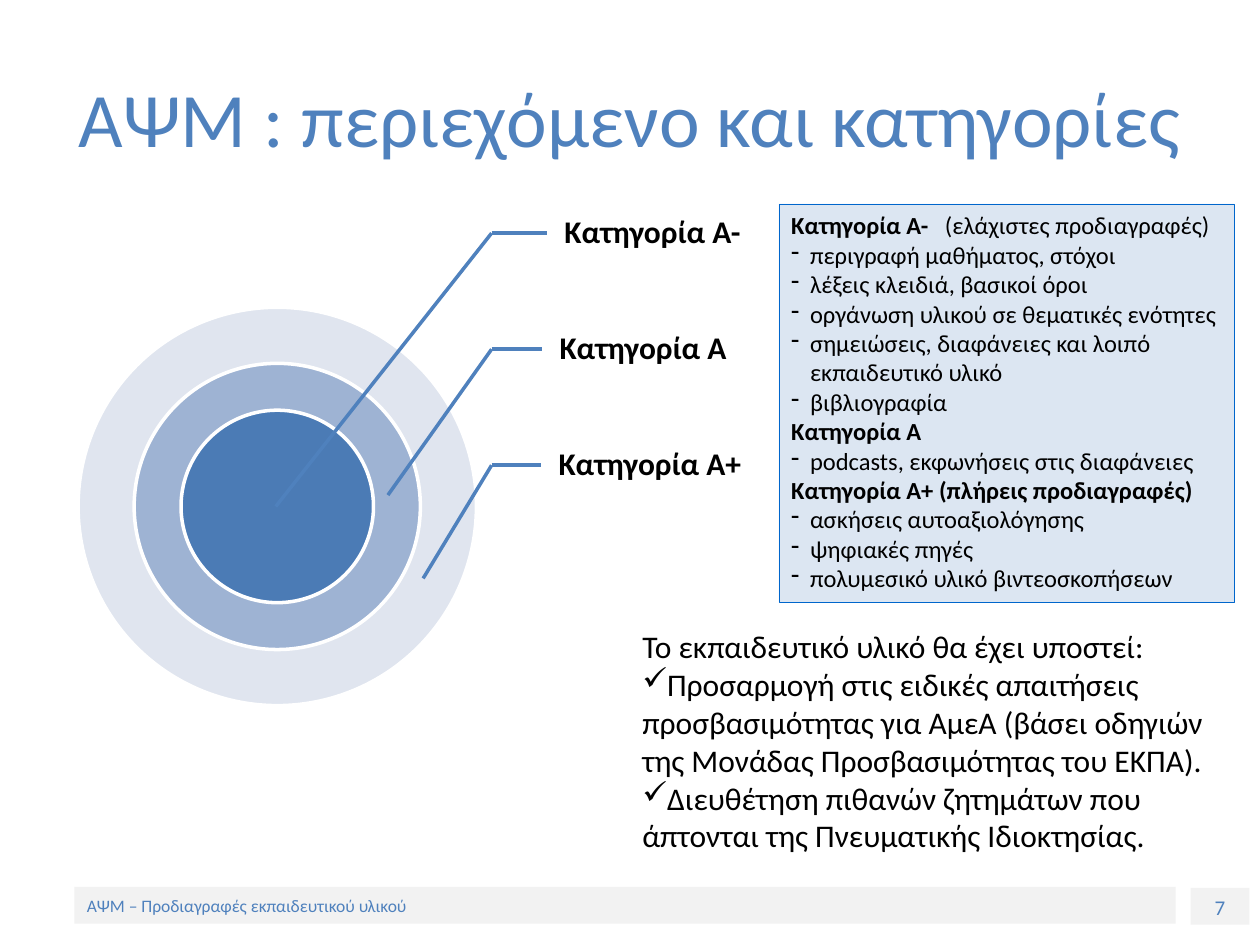
from dataclasses import dataclass

import pptx
import pptx.dml.color
import pptx.enum.shapes
import pptx.enum.text
import pptx.oxml
import pptx.oxml.ns
import pptx.util
from pptx.util import Cm

Anchor = pptx.enum.text.MSO_ANCHOR
Align = pptx.enum.text.PP_ALIGN
Shape = pptx.enum.shapes.MSO_SHAPE
qn = pptx.oxml.ns.qn


@dataclass(frozen=True)
class Theme:
    font: str = "Calibri"
    accent: str = "4F81BD"
    text: str = "000000"
    white: str = "FFFFFF"
    footer_fill: str = "F2F2F2"
    panel_fill: str = "DCE6F2"
    panel_line: str = "0066CC"
    title_size: int = 44
    body_size: int = 18
    panel_size: int = 14
    number_size: int = 12
    footer_size: int = 10


@dataclass(frozen=True)
class Line:
    """One paragraph: a bold part, a plain part, and its list marker."""
    bold: str = ""
    plain: str = ""
    bullet: str = ""
    hang: float = 0
    tab: float = 0


@dataclass(frozen=True)
class Ring:
    diameter: float
    color: str
    opacity: int


@dataclass(frozen=True)
class Category:
    label: str
    left: float
    width: float
    target: tuple[float, float]


THEME = Theme()
DASH_HANG = 0.38
RING_CENTER = (5.59, 10.21)
FIRST_LABEL_Y, LABEL_PITCH, LABEL_HEIGHT = 4.7, 2.34, 2.34
ELBOW_X = 9.91

RINGS = [Ring(8.03, "C2CDE1", 50), Ring(5.77, "88A3CA", 75), Ring(3.88, "4B7BB5", 100)]

CATEGORIES = [
    Category("Κατηγορία Α-", 11.02, 4.01, (5.56, 10.21)),
    Category("Κατηγορία Α", 10.92, 4.01, (7.82, 9.98)),
    Category("Κατηγορία Α+", 10.9, 4.78, (8.53, 11.66)),
]


def dash(text: str) -> Line:
    return Line(plain=text, bullet="-", hang=DASH_HANG)


SPECIFICATIONS = [
    Line(bold="Κατηγορία Α-", plain="\t(ελάχιστες προδιαγραφές)", tab=3.1),
    dash("περιγραφή μαθήματος, στόχοι"),
    dash("λέξεις κλειδιά, βασικοί όροι"),
    dash("οργάνωση υλικού σε θεματικές ενότητες"),
    dash("σημειώσεις, διαφάνειες και λοιπό εκπαιδευτικό υλικό"),
    dash("βιβλιογραφία"),
    Line(bold="Κατηγορία Α"),
    dash("podcasts, εκφωνήσεις στις διαφάνειες"),
    Line(bold="Κατηγορία Α+ (πλήρεις προδιαγραφές)"),
    dash("ασκήσεις αυτοαξιολόγησης"),
    dash("ψηφιακές πηγές"),
    dash("πολυμεσικό υλικό βιντεοσκοπήσεων"),
]

MATERIAL_CHECKS = [
    Line(plain="Το εκπαιδευτικό υλικό θα έχει υποστεί:"),
    Line(plain="Προσαρμογή στις ειδικές απαιτήσεις προσβασιμότητας για ΑμεΑ "
               "(βάσει οδηγιών της Μονάδας Προσβασιμότητας του ΕΚΠΑ).", bullet="✓"),
    Line(plain="Διευθέτηση πιθανών ζητημάτων που άπτονται της "
               "Πνευματικής Ιδιοκτησίας.", bullet="✓"),
]


def rgb(color: str) -> pptx.dml.color.RGBColor:
    return pptx.dml.color.RGBColor.from_string(color)


def add_child(parent, tag: str, **attributes):
    child = pptx.oxml.parse_xml(f'<{tag} {pptx.oxml.ns.nsdecls("a")}/>')
    for key, value in attributes.items():
        child.set(key, str(value))
    parent.append(child)
    return child


def write_text(shape, lines: list[Line], *, size: int, color: str = THEME.text,
               align=Align.LEFT, anchor=Anchor.TOP, spacing: float = 1.0,
               insets: tuple[float, ...] = (0.25, 0.13, 0.25, 0.13)) -> None:
    frame = shape.text_frame
    frame.word_wrap = True
    frame.vertical_anchor = anchor
    (frame.margin_left, frame.margin_top,
     frame.margin_right, frame.margin_bottom) = map(Cm, insets)
    for index, line in enumerate(lines):
        paragraph = frame.add_paragraph() if index else frame.paragraphs[0]
        paragraph.alignment = align
        paragraph.line_spacing = spacing
        properties = paragraph._p.get_or_add_pPr()
        if line.bullet:
            properties.set("marL", str(Cm(line.hang)))
            properties.set("indent", str(-Cm(line.hang)))
            add_child(properties, "a:buChar", char=line.bullet)
        if line.tab:
            stops = add_child(properties, "a:tabLst")
            add_child(stops, "a:tab", pos=Cm(line.tab), algn="l")
        for text, bold in ((line.bold, True), (line.plain, False)):
            if text:
                run = paragraph.add_run()
                run.text = text
                run.font.name = THEME.font
                run.font.size = pptx.util.Pt(size)
                run.font.bold = bold
                run.font.color.rgb = rgb(color)


def add_box(slide, left: float, top: float, width: float, height: float):
    return slide.shapes.add_textbox(Cm(left), Cm(top), Cm(width), Cm(height))


def add_filled(slide, kind, left: float, top: float, width: float, height: float,
               fill: str, line: str = "", weight: float = 0, opacity: int = 100):
    shape = slide.shapes.add_shape(kind, Cm(left), Cm(top), Cm(width), Cm(height))
    shape.shadow.inherit = False
    shape.fill.solid()
    shape.fill.fore_color.rgb = rgb(fill)
    if opacity < 100:
        color = shape._element.spPr.find(qn("a:solidFill"))[0]
        add_child(color, "a:alpha", val=opacity * 1000)
    if line:
        shape.line.color.rgb = rgb(line)
        shape.line.width = pptx.util.Pt(weight)
    else:
        shape.line.fill.background()
    return shape


def add_leader(slide, start: tuple[float, float], end: tuple[float, float]):
    leader = slide.shapes.add_connector(
        pptx.enum.shapes.MSO_CONNECTOR.STRAIGHT, *map(Cm, start + end))
    leader.line.color.rgb = rgb(THEME.accent)
    leader.line.width = pptx.util.Pt(2)
    add_child(leader._element.spPr, "a:effectLst")
    return leader


def add_ring(slide, ring: Ring) -> None:
    left, top = (c - ring.diameter / 2 for c in RING_CENTER)
    add_filled(slide, Shape.OVAL, left, top, ring.diameter, ring.diameter,
               ring.color, THEME.white, 2, ring.opacity)


def add_category(slide, category: Category, y: float) -> None:
    label = add_box(slide, category.left, y - LABEL_HEIGHT / 2, category.width, LABEL_HEIGHT)
    write_text(label, [Line(bold=category.label)], size=THEME.body_size,
               anchor=Anchor.MIDDLE, spacing=0.9, insets=(0.36, 0.08, 0.08, 0.08))
    elbow = (ELBOW_X, y)
    add_leader(slide, elbow, (category.left, y)).end_connect(label, 1)
    add_leader(slide, elbow, category.target)


def main() -> None:
    deck = pptx.Presentation()
    deck.slide_width, deck.slide_height = Cm(25.4), Cm(19.05)
    slide = deck.slides.add_slide(deck.slide_layouts[6])

    # Footer band and page number
    page_number = add_filled(slide, Shape.RECTANGLE, 24, 17.9, 1.19, 0.74, THEME.footer_fill)
    write_text(page_number, [Line(plain="7")], size=THEME.number_size,
               color=THEME.accent, align=Align.CENTER)
    footer = add_filled(slide, Shape.RECTANGLE, 1.5, 17.88, 22.2, 0.74, THEME.footer_fill)
    write_text(footer, [Line(plain="ΑΨΜ – Προδιαγραφές εκπαιδευτικού υλικού")],
               size=THEME.footer_size, color=THEME.accent, anchor=Anchor.MIDDLE)

    # Title
    title = add_box(slide, 1.27, 0.76, 22.86, 3.18)
    write_text(title, [Line(plain="ΑΨΜ : περιεχόμενο και κατηγορίες")], size=THEME.title_size,
               color=THEME.accent, align=Align.CENTER, anchor=Anchor.MIDDLE)

    # Concentric rings with labelled leaders
    for ring in RINGS:
        add_ring(slide, ring)
    for row, category in enumerate(CATEGORIES):
        add_category(slide, category, FIRST_LABEL_Y + row * LABEL_PITCH)

    # Specifications panel and closing checks
    specifications = add_filled(slide, Shape.RECTANGLE, 15.7, 4.11, 9.19, 8.03,
                                THEME.panel_fill, THEME.panel_line, 0.25)
    write_text(specifications, SPECIFICATIONS, size=THEME.panel_size)
    material_checks = add_box(slide, 12.7, 12.52, 12.19, 4.88)
    write_text(material_checks, MATERIAL_CHECKS, size=THEME.body_size)

    deck.save("out.pptx")


if __name__ == "__main__":
    main()
